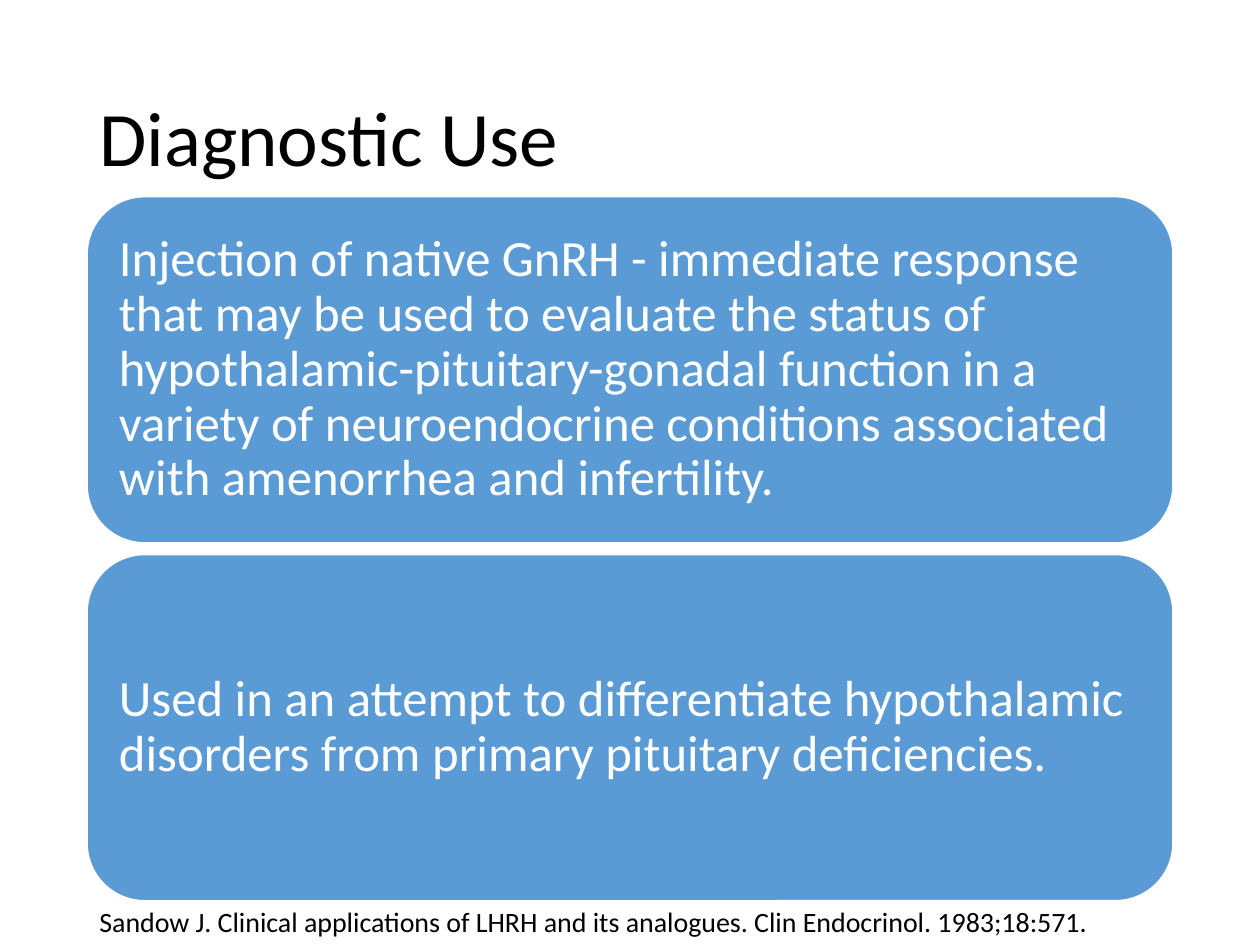
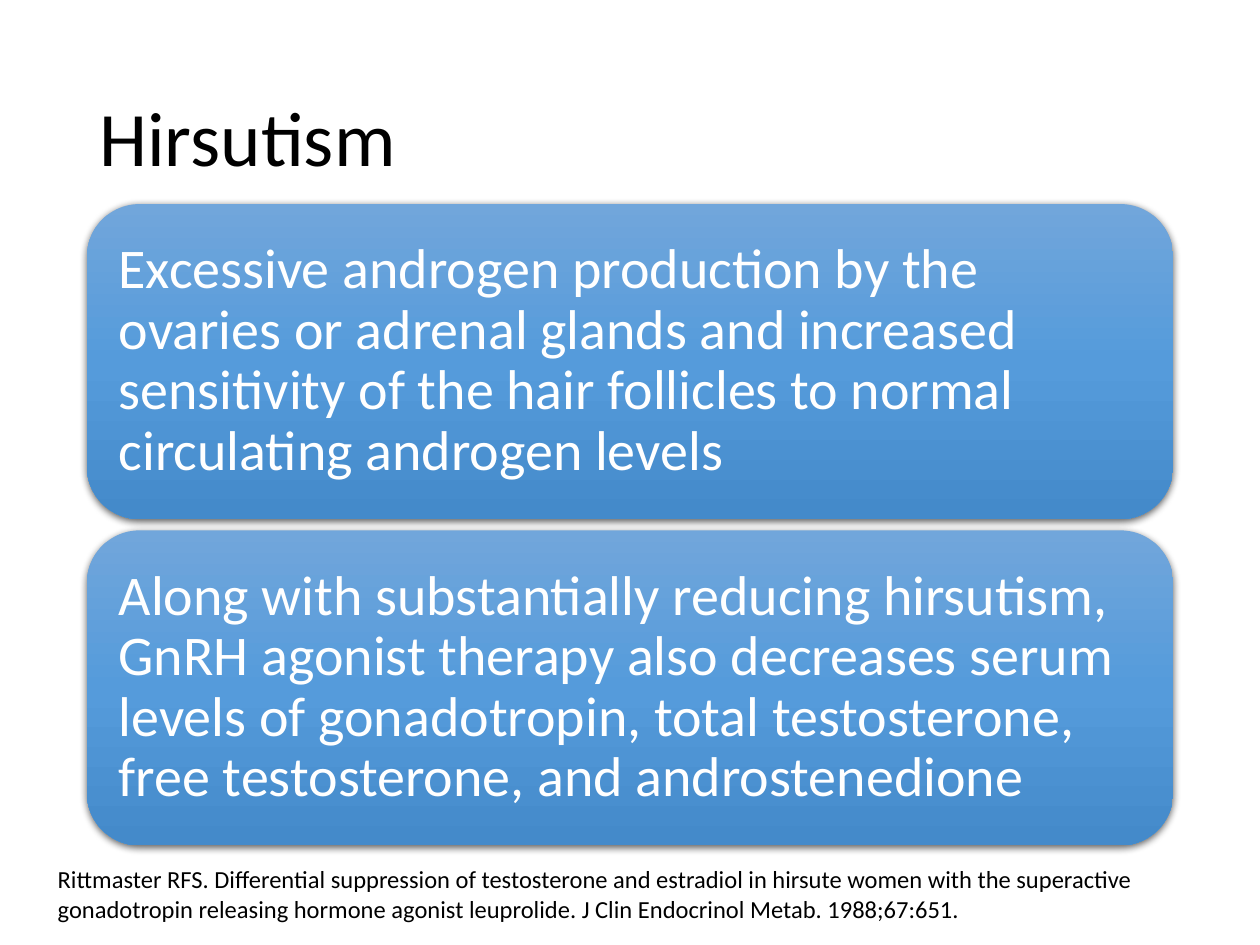
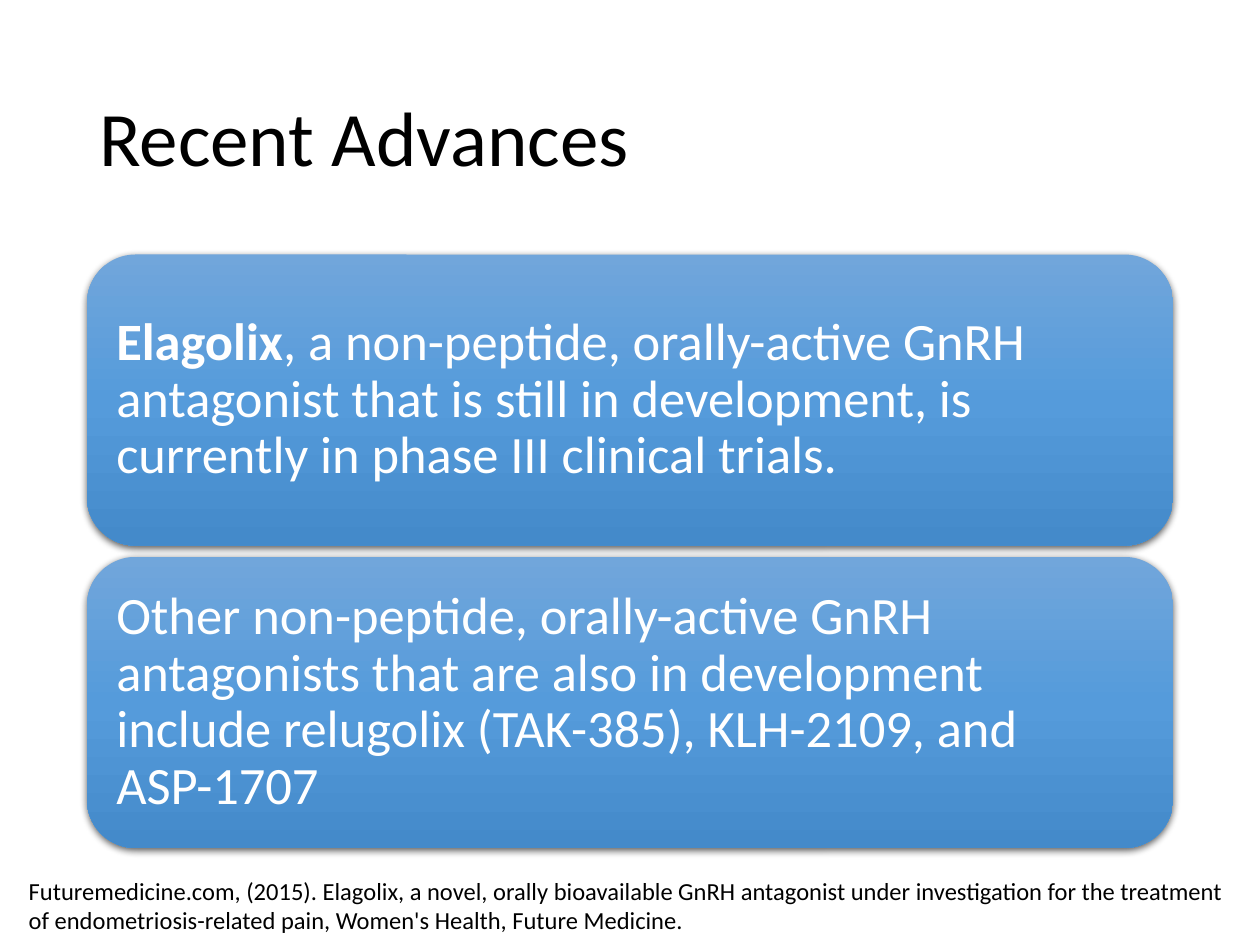
from pptx import Presentation
from pptx.dml.color import RGBColor
from pptx.enum.shapes import MSO_SHAPE
from pptx.enum.text import MSO_ANCHOR, PP_ALIGN
from pptx.oxml.ns import qn
from pptx.util import Pt
from lxml import etree

ROUND = MSO_SHAPE.ROUNDED_RECTANGLE
TOP, MIDDLE = MSO_ANCHOR.TOP, MSO_ANCHOR.MIDDLE
LEFT = PP_ALIGN.LEFT

SCALE = 9144  # EMU per px, at 100 px to the inch
COLORS = {"ink": "000000", "paper": "FFFFFF", "card": "5B9BD5",
          "light": "71A6DB", "mid": "559BDB", "deep": "448ACA"}
STOPS = [(0, "light"), (50, "mid"), (100, "deep")]
FONT = "Calibri"
MARGIN, WIDTH, GAP = 69, 862, 9

SLIDES = [
    {"title": "Diagnostic Use", "size": 29, "glossy": False,
     "box": (MARGIN, 156, WIDTH, 559),
     "cards": [
         [("Injection of native GnRH - immediate response that may be used to "
           "evaluate the status of hypothalamic-pituitary-gonadal function in a "
           "variety of neuroendocrine conditions associated with amenorrhea and "
           "infertility.", False)],
         [("Used in an attempt to differentiate hypothalamic disorders from "
           "primary pituitary deficiencies.", False)]],
     "cite": "Sandow J. Clinical applications of LHRH and its analogues. "
             "Clin Endocrinol. 1983;18:571.",
     "foot": (MARGIN, 713, 931, 37), "small": 16},
    {"title": "Hirsutism", "size": 32, "glossy": True,
     "box": (MARGIN, 162, WIDTH, 510),
     "cards": [
         [("Excessive androgen production by the ovaries or adrenal glands and "
           "increased sensitivity of the hair follicles to normal circulating "
           "androgen levels", False)],
         [("Along with substantially reducing hirsutism, GnRH agonist therapy "
           "also decreases serum levels of gonadotropin, total testosterone, "
           "free testosterone, and androstenedione", False)]],
     "cite": "Rittmaster RFS. Differential suppression of testosterone and "
             "estradiol in hirsute women with the superactive gonadotropin "
             "releasing hormone agonist leuprolide. J Clin Endocrinol Metab. "
             "1988;67:651.",
     "foot": (36, 681, 927, 57), "small": 14},
    {"title": "Recent Advances", "size": 30, "glossy": True,
     "box": (MARGIN, 202, WIDTH, 471),
     "cards": [
         [("Elagolix", True),
          (", a non-peptide, orally-active GnRH antagonist that is still in "
           "development, is currently in phase III clinical trials.", False)],
         [("Other non-peptide, orally-active GnRH antagonists that are also in "
           "development include relugolix (TAK-385), KLH-2109, and ASP-1707",
           False)]],
     "cite": "Futuremedicine.com, (2015). Elagolix, a novel, orally bioavailable "
             "GnRH antagonist under investigation for the treatment of "
             "endometriosis-related pain, Women's Health, Future Medicine.",
     "foot": (13, 690, 987, 57), "small": 14},
]


def emu(*lengths):
    return [length * SCALE for length in lengths]


def rgb(name):
    return RGBColor.from_string(COLORS[name])


def write(shape, runs, size, color="ink", anchor=TOP, inset=None, spacing=None):
    """Fill a shape with one paragraph of (text, bold) runs."""
    frame = shape.text_frame
    frame.word_wrap = True
    frame.vertical_anchor = anchor
    if inset is not None:
        frame.margin_left = frame.margin_right = inset * SCALE
        frame.margin_top = frame.margin_bottom = inset * SCALE
    para = frame.paragraphs[0]
    para.alignment = LEFT
    para.line_spacing = spacing
    for text, bold in runs:
        run = para.add_run()
        run.text = text
        run.font.name = FONT
        run.font.size = Pt(size)
        run.font.bold = bold
        run.font.color.rgb = rgb(color)


def label(slide, box, text, size, **style):
    write(slide.shapes.add_textbox(*emu(*box)), [(text, False)], size, **style)


def tint(parent, name):
    return etree.SubElement(parent, qn("a:srgbClr"), val=COLORS[name])


def gloss(card):
    """Give a card a vertical gradient and a soft shadow."""
    card.fill.gradient()
    card.line.fill.background()
    props = card._element.spPr
    grad = props.find(qn("a:gradFill"))
    grad.find(qn("a:lin")).set("ang", "5400000")
    stops = grad.find(qn("a:gsLst"))
    for old in list(stops):
        stops.remove(old)
    for place, name in STOPS:
        tint(etree.SubElement(stops, qn("a:gs"), pos=str(place * 1000)), name)
    shade = etree.SubElement(
        props.find(qn("a:effectLst")), qn("a:outerShdw"), blurRad=str(Pt(4.5)),
        dist=str(Pt(1.5)), dir="5400000", algn="ctr", rotWithShape="0")
    etree.SubElement(tint(shade, "ink"), qn("a:alpha"), val="63000")


def flat(card):
    card.fill.solid()
    card.fill.fore_color.rgb = rgb("card")
    card.line.color.rgb = rgb("paper")
    card.line.width = Pt(1)


def stack(slide, box, cards, size, glossy):
    """Share the height of the box equally among the cards."""
    left, top, width, height = box
    tall = (height - GAP * (len(cards) - 1)) // len(cards)
    for row, runs in enumerate(cards):
        place = emu(left, top + row * (tall + GAP), width, tall)
        card = slide.shapes.add_shape(ROUND, *place)
        card.shadow.inherit = False
        if glossy:
            gloss(card)
        else:
            flat(card)
        write(card, runs, size, color="paper", anchor=MIDDLE,
              inset=size * 5 // 12, spacing=0.9)


def topic(deck, data):
    slide = deck.slides.add_slide(deck.slide_layouts[6])
    label(slide, (MARGIN, 40, WIDTH, 145), data["title"], 44,
          anchor=MIDDLE, spacing=0.9)
    stack(slide, data["box"], data["cards"], data["size"], data["glossy"])
    label(slide, data["foot"], data["cite"], data["small"])


def main():
    deck = Presentation()
    deck.slide_width, deck.slide_height = emu(1000, 750)
    for data in SLIDES:
        topic(deck, data)
    deck.save("out.pptx")


if __name__ == "__main__":
    main()
